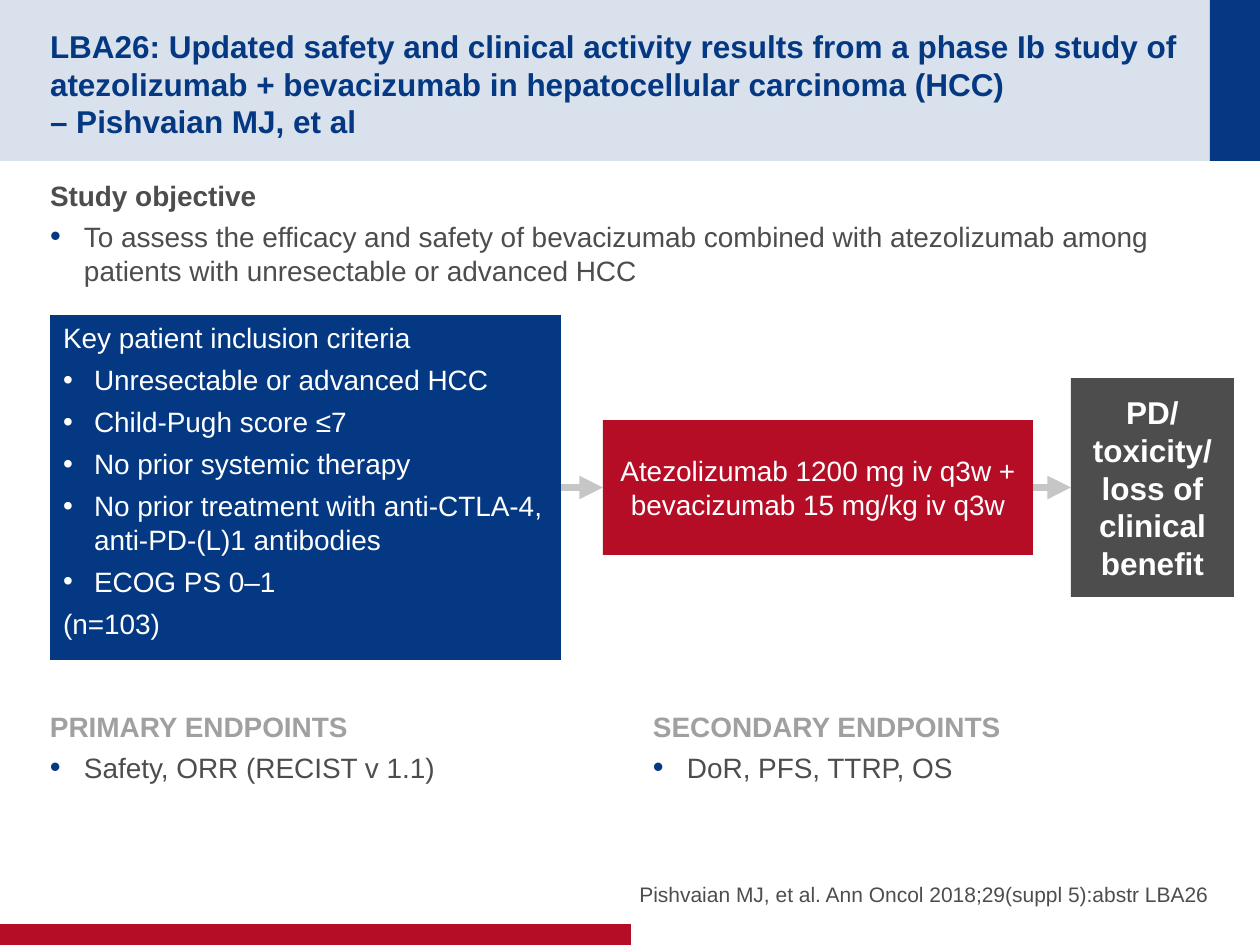
import pptx
import pptx.dml.color
import pptx.enum.shapes
import pptx.enum.text
import pptx.oxml.ns
import pptx.util
from lxml import etree

NAVY, RED, GREY, SILVER, WHITE = "043882", "B60D27", "4D4D4D", "A0A0A0", "FFFFFF"
LEFT, CENTER, RIGHT = (getattr(pptx.enum.text.PP_ALIGN, a) for a in ("LEFT", "CENTER", "RIGHT"))
TOP, MIDDLE, BOTTOM = (getattr(pptx.enum.text.MSO_ANCHOR, a) for a in ("TOP", "MIDDLE", "BOTTOM"))


def px(n):
    """Turn pixels into EMU."""
    return pptx.util.Emu(round(n * 914400 / 126))


def rgb(color):
    """Turn a hex string into a colour."""
    return pptx.dml.color.RGBColor.from_string(color)


def child(parent, tag, **attrs):
    """Append a DrawingML element."""
    return etree.SubElement(parent, pptx.oxml.ns.qn(tag), attrs)


def place(sp, x, y, w, h):
    """Set the position and size of a shape."""
    sp.left, sp.top, sp.width, sp.height = px(x), px(y), px(w), px(h)


def set_frame(sp, text, insets, anchor=TOP):
    """Set the text, margins and anchor of a shape."""
    tf = sp.text_frame
    tf.text = text
    tf.word_wrap = True
    tf.auto_size = pptx.enum.text.MSO_AUTO_SIZE.NONE
    tf.vertical_anchor = anchor
    tf.margin_left, tf.margin_top, tf.margin_right, tf.margin_bottom = map(px, insets)
    return tf.paragraphs


def format_paragraph(p, size, color, bold=False, align=LEFT, after=0, bullet=None, indent=0):
    """Format a paragraph, with a bullet of the given colour if there is one."""
    p.alignment = align
    p.space_before = pptx.util.Pt(0)
    p.space_after = pptx.util.Pt(after)
    for r in p.runs:
        r.font.name, r.font.size, r.font.bold = "Arial", pptx.util.Pt(size), bold
        r.font.color.rgb = rgb(color)
    pPr = p._p.get_or_add_pPr()
    pPr.set("marL", str(px(indent)))
    pPr.set("indent", str(-px(indent)))
    if bullet:
        child(child(pPr, "a:buClr"), "a:srgbClr", val=bullet)
        child(pPr, "a:buSzPct", val="110000" if bullet == NAVY else "100000")
        child(pPr, "a:buFont", typeface="Arial")
        child(pPr, "a:buChar", char="•")
    else:
        child(pPr, "a:buNone")


def add_rect(s, x, y, w, h, color):
    """Add a plain filled rectangle."""
    sp = s.shapes.add_shape(pptx.enum.shapes.MSO_SHAPE.RECTANGLE, px(x), px(y), px(w), px(h))
    sp.shadow.inherit = False
    sp.fill.solid()
    sp.fill.fore_color.rgb = rgb(color)
    sp.line.fill.background()
    return sp


def add_band(s, x, y, w, h, color, alpha=100):
    """Add a background band behind the placeholders."""
    sp = add_rect(s, x, y, w, h, color)
    fill = sp._element.spPr.find(".//" + pptx.oxml.ns.qn("a:srgbClr"))
    child(fill, "a:alpha", val=str(alpha * 1000))
    s.shapes._spTree.insert(2, sp._element)


def add_arrow(s, start, end):
    """Join the facing sides of two boxes with an arrow."""
    line = s.shapes.add_connector(pptx.enum.shapes.MSO_CONNECTOR.STRAIGHT, 0, 0, 0, 0)
    line.begin_connect(start, 3)
    line.end_connect(end, 1)
    line.line.color.rgb = rgb("C6C6C6")
    line.line.width = pptx.util.Pt(4.5)
    child(line.line._get_or_add_ln(), "a:tailEnd", type="triangle")
    child(line._element.spPr, "a:effectLst")


def fill_section(sp, heading, item, color, insets):
    """Write a bold heading with one bulleted item below it."""
    head, body = set_frame(sp, heading + "\n" + item, insets)
    format_paragraph(head, 16, color, bold=True, after=4)
    format_paragraph(body, 16, GREY, after=4, bullet=NAVY, indent=34)


def add_criteria(s, heading, items, count):
    """Add the box of inclusion criteria."""
    sp = add_rect(s, 50, 315, 511, 345, NAVY)
    paragraphs = set_frame(sp, "\n".join([heading, *items, count]), (13, 6, 13, 6))
    for p in paragraphs:
        listed = p.text in items
        format_paragraph(p, 16, WHITE, after=4.8,
                         bullet=WHITE if listed else None, indent=31 if listed else 0)
    return sp


def add_step(s, x, y, w, h, color, text, size, bold, inset):
    """Add a flow box with centred text."""
    sp = add_rect(s, x, y, w, h, color)
    for p in set_frame(sp, text, (inset, 0, inset, 0), MIDDLE):
        format_paragraph(p, size, WHITE, bold, CENTER)
    return sp


def main():
    """Build the slide."""
    prs = pptx.Presentation()
    prs.slide_width, prs.slide_height = px(1260), px(945)
    s = prs.slides.add_slide(prs.slide_layouts[3])
    title, objective, citation = s.placeholders

    add_band(s, 0, 924, 631, 21, RED)
    add_band(s, 1210, 0, 50, 161, NAVY)
    add_band(s, 0, 0, 1260, 161, NAVY, alpha=15)

    place(title, 50, 25, 1135, 111)
    p, = set_frame(title, "LBA26: Updated safety and clinical activity results from a phase Ib "
                   "study of atezolizumab + bevacizumab in hepatocellular carcinoma (HCC) \v"
                   "– Pishvaian MJ, et al", (0, 6, 0, 0), MIDDLE)
    format_paragraph(p, 18, NAVY, bold=True)

    place(objective, 50, 173, 1159, 654)
    fill_section(objective, "Study objective",
                 "To assess the efficacy and safety of bevacizumab combined with atezolizumab "
                 "among patients with unresectable or advanced HCC", GREY, (0, 6, 0, 6))

    place(citation, 629, 840, 580, 67)
    p, = set_frame(citation, "Pishvaian MJ, et al. Ann Oncol 2018;29(suppl 5):abstr LBA26",
                   (0, 0, 0, 0), BOTTOM)
    format_paragraph(p, 12, GREY, align=RIGHT, after=4)

    for x, h, inset, heading, item in (
            (50, 103, 0, "PRIMARY ENDPOINTS", "Safety, ORR (RECIST v 1.1)"),
            (640, 149, 13, "SECONDARY ENDPOINTS", "DoR, PFS, TTRP, OS")):
        sp = s.shapes.add_textbox(px(x), px(704), px(570), px(h))
        fill_section(sp, heading, item, SILVER, (inset, 6, inset, 6))

    criteria = add_criteria(s, "Key patient inclusion criteria", [
        "Unresectable or advanced HCC",
        "Child-Pugh score ≤7",
        "No prior systemic therapy",
        "No prior treatment with anti-CTLA-4, anti-PD-(L)1 antibodies",
        "ECOG PS 0–1"], "(n=103)")
    treatment = add_step(s, 603, 420, 430, 135, RED,
                         "Atezolizumab 1200 mg iv q3w + bevacizumab 15 mg/kg iv q3w", 16, False, 5)
    outcome = add_step(s, 1071, 378, 163, 219, GREY,
                       "PD/\vtoxicity/\vloss of clinical benefit", 18, True, 13)
    add_arrow(s, criteria, treatment)
    add_arrow(s, treatment, outcome)

    prs.save("out.pptx")


if __name__ == "__main__":
    main()
